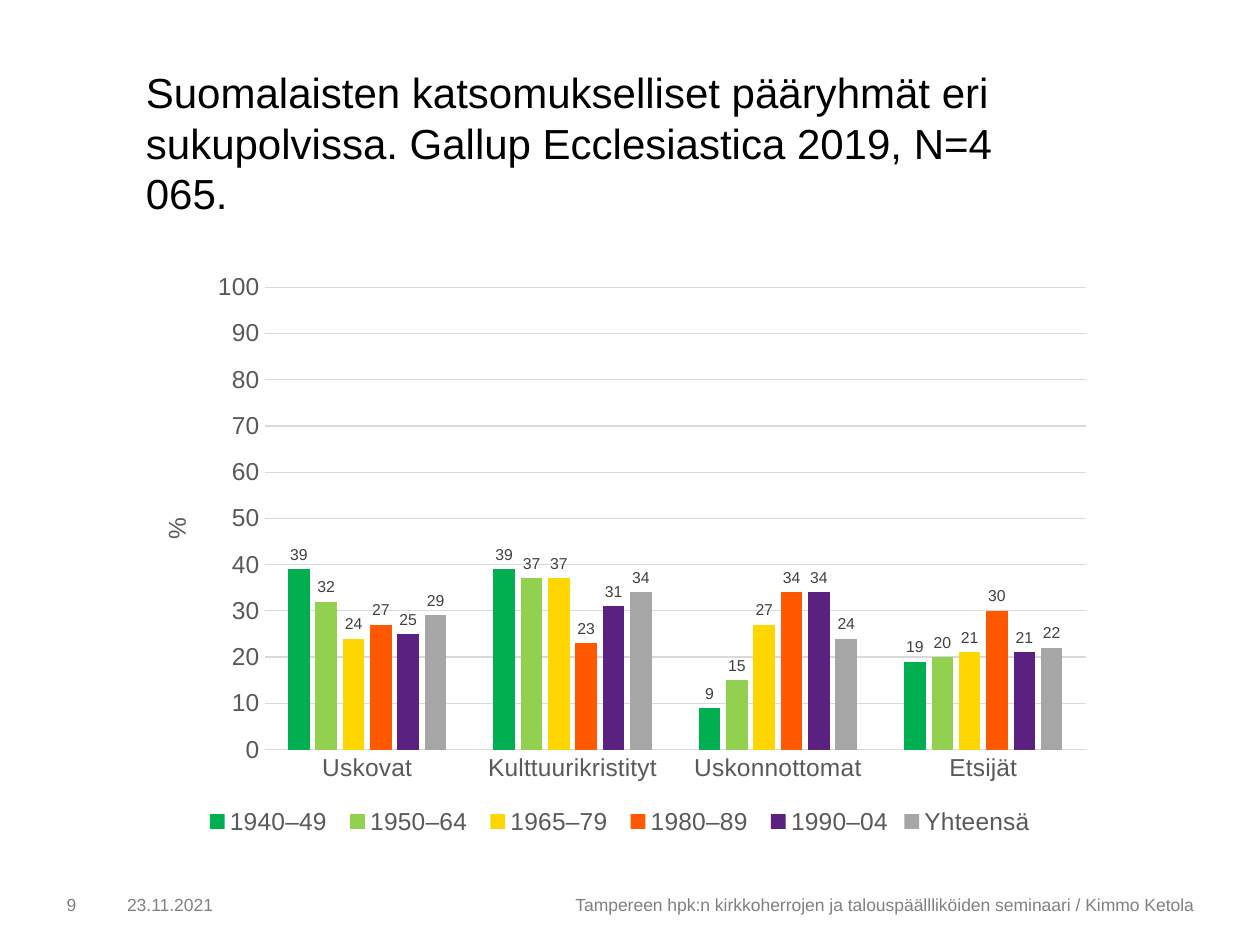
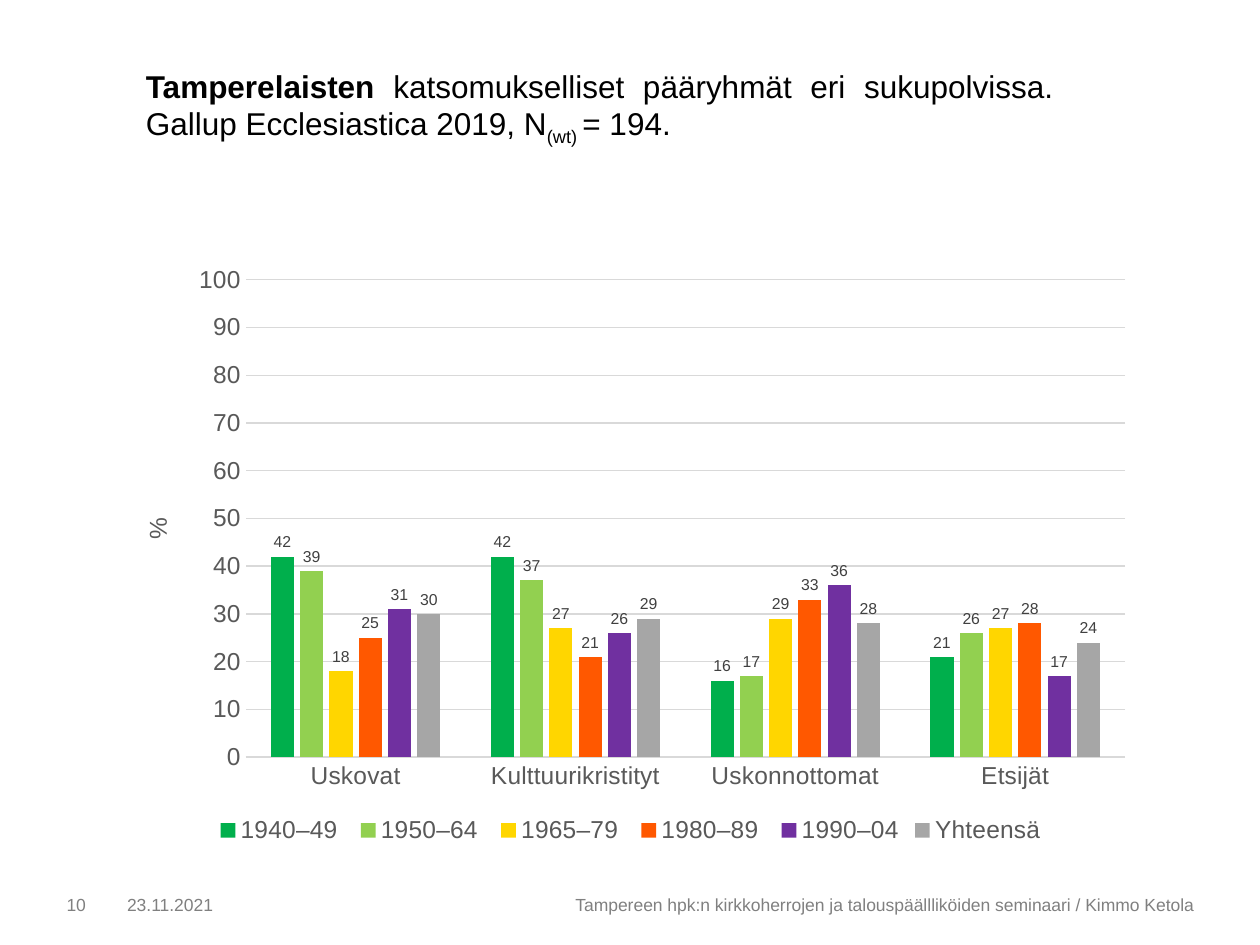
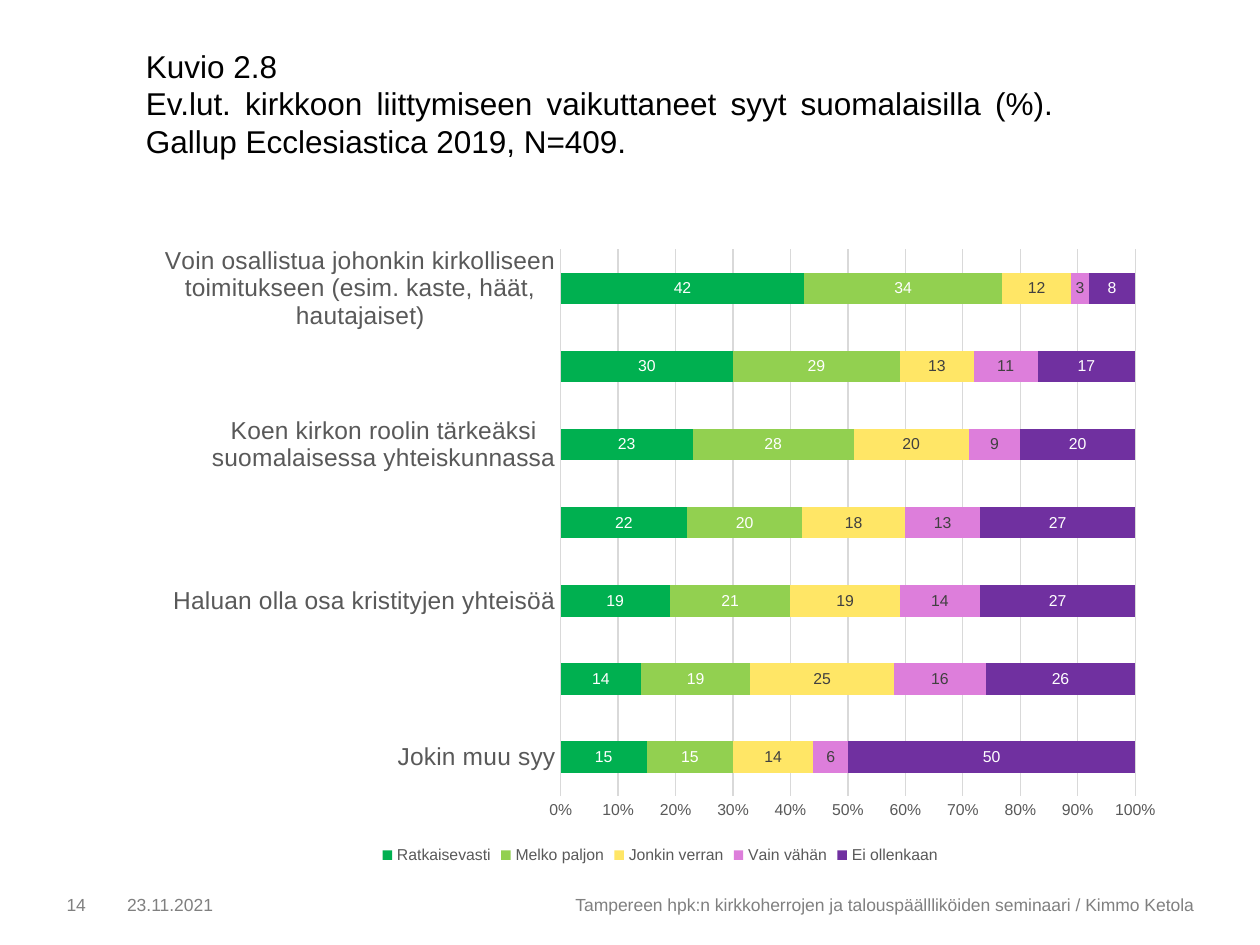
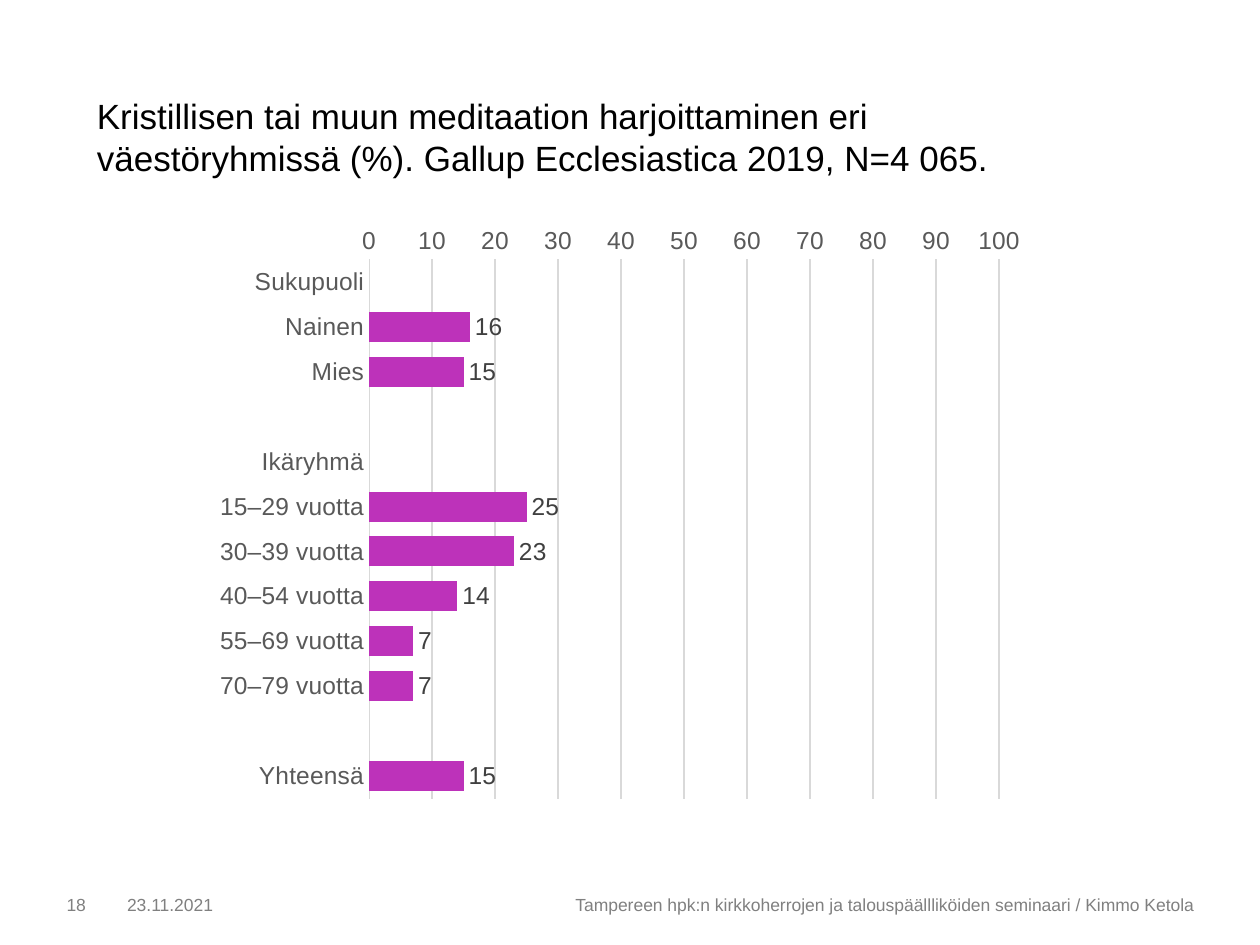
from lxml import etree
from pptx import Presentation
from pptx.chart.data import CategoryChartData
from pptx.dml.color import RGBColor
from pptx.enum.chart import XL_CHART_TYPE, XL_LABEL_POSITION, XL_LEGEND_POSITION, XL_TICK_MARK
from pptx.enum.text import MSO_ANCHOR, MSO_AUTO_SIZE, PP_ALIGN
from pptx.oxml.ns import qn
from pptx.util import Inches, Pt

COLUMNS = XL_CHART_TYPE.COLUMN_CLUSTERED
BARS = XL_CHART_TYPE.BAR_CLUSTERED
STACKED_BARS = XL_CHART_TYPE.BAR_STACKED_100
OUTSIDE = XL_LABEL_POSITION.OUTSIDE_END
CENTER = XL_LABEL_POSITION.CENTER
BOTTOM = XL_LEGEND_POSITION.BOTTOM
NO_TICK = XL_TICK_MARK.NONE
TOP, MIDDLE = MSO_ANCHOR.TOP, MSO_ANCHOR.MIDDLE
LEFT, RIGHT, JUSTIFY = PP_ALIGN.LEFT, PP_ALIGN.RIGHT, PP_ALIGN.JUSTIFY
GROW = MSO_AUTO_SIZE.SHAPE_TO_FIT_TEXT

FONT = "Arial"
COLORS = {
    "black": "000000",
    "white": "FFFFFF",
    "footer": "808080",
    "axis": "595959",
    "label": "404040",
    "grid": "D9D9D9",
    "green": "00B050",
    "deep green": "00AF4C",
    "lime": "92D050",
    "yellow": "FFD600",
    "pale yellow": "FFE666",
    "orange": "FF5800",
    "dark purple": "5A2181",
    "purple": "7030A0",
    "pink": "DD7EDB",
    "magenta": "BD32BA",
    "gray": "A6A6A6",
}
DATE = "23.11.2021"
EVENT = "Tampereen hpk:n kirkkoherrojen ja talouspäällliköiden seminaari / Kimmo Ketola"

GROUPS = ["Uskovat", "Kulttuurikristityt", "Uskonnottomat", "Etsijät"]
GENERATIONS = ["1940–49 ", "1950–64 ", "1965–79 ", "1980–89 ", "1990–04", "Yhteensä"]
FINLAND_VALUES = [
    [39, 39, 9, 19],
    [32, 37, 15, 20],
    [24, 37, 27, 21],
    [27, 23, 34, 30],
    [25, 31, 34, 21],
    [29, 34, 24, 22],
]
TAMPERE_VALUES = [
    [42, 42, 16, 21],
    [39, 37, 17, 26],
    [18, 27, 29, 27],
    [25, 21, 33, 28],
    [31, 26, 36, 17],
    [30, 29, 28, 24],
]
REASONS = [
    "Jokin muu syy",
    "",
    "Haluan olla osa kristityjen yhteisöä",
    "",
    "Koen kirkon roolin tärkeäksi suomalaisessa yhteiskunnassa",
    "",
    "Voin osallistua johonkin kirkolliseen toimitukseen (esim. kaste, häät, hautajaiset)",
]
REASON_SERIES = [
    ("Ratkaisevasti", [15, 14, 19, 22, 23, 30, 42], "green", "white"),
    ("Melko paljon", [15, 19, 21, 20, 28, 29, 34], "lime", "white"),
    ("Jonkin verran", [14, 25, 19, 18, 20, 13, 12], "pale yellow", "label"),
    ("Vain vähän", [6, 16, 14, 13, 9, 11, 3], "pink", "label"),
    ("Ei ollenkaan", [50, 26, 27, 27, 20, 17, 8], "purple", "white"),
]
MEDITATION = [
    ("Sukupuoli", None),
    ("Nainen", 16),
    ("Mies", 15),
    ("", None),
    ("Ikäryhmä", None),
    ("15–29 vuotta", 25),
    ("30–39 vuotta", 23),
    ("40–54 vuotta", 14),
    ("55–69 vuotta", 7),
    ("70–79 vuotta", 7),
    ("", None),
    ("Yhteensä", 15),
]


def rgb(name):
    return RGBColor.from_string(COLORS[name])


class Builder:
    def __init__(self):
        self.deck = Presentation()
        self.deck.slide_width, self.deck.slide_height = Inches(10), Inches(7.5)
        self.page = None

    def new_page(self, number):
        self.page = self.deck.slides.add_slide(self.deck.slide_layouts[6])
        footers = [(0.91, 2.05, DATE, LEFT), (2.95, 6.62, EVENT, RIGHT), (0.43, 0.47, str(number), LEFT)]
        for left, width, words, align in footers:
            self.text((left, 7.06, width, 0.24), [([(words, {})], align)], 10, "footer", MIDDLE)

    def style(self, font, size, color):
        font.name, font.size = FONT, Pt(size)
        font.color.rgb = rgb(color)

    def text(self, area, paragraphs, size, color, anchor=TOP):
        box = self.page.shapes.add_textbox(*map(Inches, area))
        frame = box.text_frame
        frame.word_wrap = True
        frame.vertical_anchor = anchor
        for index, (spans, align) in enumerate(paragraphs):
            para = frame.paragraphs[0] if index == 0 else frame.add_paragraph()
            para.alignment = align
            for words, options in spans:
                span = para.add_run()
                span.text = words
                self.style(span.font, size, color)
                span.font.bold = options.get("bold", False)
                if "baseline" in options:
                    span._r.get_or_add_rPr().set("baseline", str(options["baseline"]))
        return frame

    def title(self, area, paragraphs, size):
        self.text(area, paragraphs, size, "black").auto_size = GROW

    def place(self, parent, index, area, inner, target=None):
        for old in parent.findall(qn("c:layout")):
            parent.remove(old)
        layout = etree.Element(qn("c:layout"))
        manual = etree.SubElement(layout, qn("c:manualLayout"))
        settings = [("layoutTarget", target)] if target else []
        settings += [("xMode", "edge"), ("yMode", "edge")]
        settings += [
            ("x", (inner[0] - area[0]) / area[2]),
            ("y", (inner[1] - area[1]) / area[3]),
        ]
        if len(inner) == 4:
            settings += [("w", inner[2] / area[2]), ("h", inner[3] / area[3])]
        for tag, value in settings:
            etree.SubElement(manual, qn("c:" + tag)).set("val", str(value))
        parent.insert(index, layout)

    def chart(self, kind, area, plot_area, categories, series, gap, overlap=None,
              label_size=9, label_position=OUTSIDE, value_size=14, legend_size=None):
        data = CategoryChartData()
        data.categories = categories
        for name, values, _, _ in series:
            data.add_series(name, values)
        chart = self.page.shapes.add_chart(kind, *map(Inches, area), data).chart
        chart.has_title = False
        self.style(chart.font, 10, "black")
        plot = chart.plots[0]
        plot.vary_by_categories = False
        plot.gap_width = gap
        if overlap is not None:
            plot.overlap = overlap
        for drawn, (_, _, color, label_color) in zip(plot.series, series):
            drawn.invert_if_negative = False
            drawn.format.fill.solid()
            drawn.format.fill.fore_color.rgb = rgb(color)
            labels = drawn.data_labels
            labels.show_value = True
            labels.position = label_position
            labels.number_format, labels.number_format_is_linked = "0", False
            self.style(labels.font, label_size, label_color)
        self.axes(chart, value_size, kind == STACKED_BARS)
        chart.has_legend = legend_size is not None
        if chart.has_legend:
            chart.legend.position = BOTTOM
            chart.legend.include_in_layout = False
            self.style(chart.legend.font, legend_size, "axis")
        plot_element = chart._chartSpace.chart.plotArea
        self.place(plot_element, 0, area, plot_area, "inner")
        return chart

    def axes(self, chart, value_size, percent):
        category, value = chart.category_axis, chart.value_axis
        for axis, size in ((category, 14), (value, value_size)):
            axis.major_tick_mark = axis.minor_tick_mark = NO_TICK
            self.style(axis.tick_labels.font, size, "axis")
        value.has_major_gridlines = True
        for line in (category.format.line, value.major_gridlines.format.line):
            line.color.rgb = rgb("grid")
            line.width = Pt(0.75)
        value.format.line.fill.background()
        value.tick_labels.number_format = "0%" if percent else "0"
        value.tick_labels.number_format_is_linked = False
        if not percent:
            value.minimum_scale, value.maximum_scale, value.major_unit = 0, 100, 10

    def generation_chart(self, area, plot_area, title_spot, values, first, fifth):
        colors = [first, "lime", "yellow", "orange", fifth, "gray"]
        series = [(name, row, color, "label") for name, row, color in zip(GENERATIONS, values, colors)]
        chart = self.chart(COLUMNS, area, plot_area, GROUPS, series, 219, -27, legend_size=14)
        axis_title = chart.value_axis.axis_title
        span = axis_title.text_frame.paragraphs[0].add_run()
        span.text = "%"
        self.style(span.font, 14, "axis")
        span.font.bold = False
        self.place(axis_title._element, 1, area, title_spot)


def main():
    show = Builder()

    show.new_page(9)
    show.title((1.06, 0.48, 7.4, 0.91), [([
        ("Suomalaisten katsomukselliset pääryhmät eri sukupolvissa. Gallup Ecclesiastica 2019, N=4 065.", {}),
    ], LEFT)], 24)
    show.generation_chart((1.06, 2.08, 7.72, 4.59), (2.1, 2.28, 6.52, 3.67), (1.24, 4.07),
                          FINLAND_VALUES, "green", "dark purple")

    show.new_page(10)
    show.title((1.06, 0.48, 7.4, 0.71), [([
        ("Tamperelaisten", {"bold": True}),
        (" katsomukselliset pääryhmät eri sukupolvissa. Gallup Ecclesiastica 2019, N", {}),
        ("(wt) ", {"baseline": -25000}),
        ("= 194.", {}),
    ], JUSTIFY)], 18)
    show.generation_chart((0.91, 2.02, 8.19, 4.72), (1.95, 2.22, 6.98, 3.79), (1.09, 4.07),
                          TAMPERE_VALUES, "deep green", "purple")

    show.new_page(14)
    show.title((1.06, 0.32, 7.4, 1.01), [
        ([("Kuvio 2.8", {})], LEFT),
        ([("Ev.lut. kirkkoon liittymiseen vaikuttaneet syyt suomalaisilla (%). "
           "Gallup Ecclesiastica 2019, N=409.", {})], JUSTIFY),
    ], 18)
    show.chart(STACKED_BARS, (1.15, 1.86, 8.18, 5.04), (4.45, 1.98, 4.56, 4.34), REASONS, REASON_SERIES,
               150, 100, label_position=CENTER, value_size=9, legend_size=9)

    show.new_page(18)
    show.title((0.67, 0.7, 8.19, 0.77), [([
        ("Kristillisen tai muun meditaation harjoittaminen eri väestöryhmissä (%). "
         "Gallup Ecclesiastica 2019, N=4 065.", {}),
    ], LEFT)], 20)
    groups, shares = zip(*MEDITATION)
    chart = show.chart(BARS, (1.61, 1.7, 6.62, 4.72), (2.93, 2.06, 5, 4.28), groups,
                       [("Series 1", shares, "magenta", "label")], 50, label_size=14)
    chart.category_axis.reverse_order = True

    show.deck.save("out.pptx")


if __name__ == "__main__":
    main()
